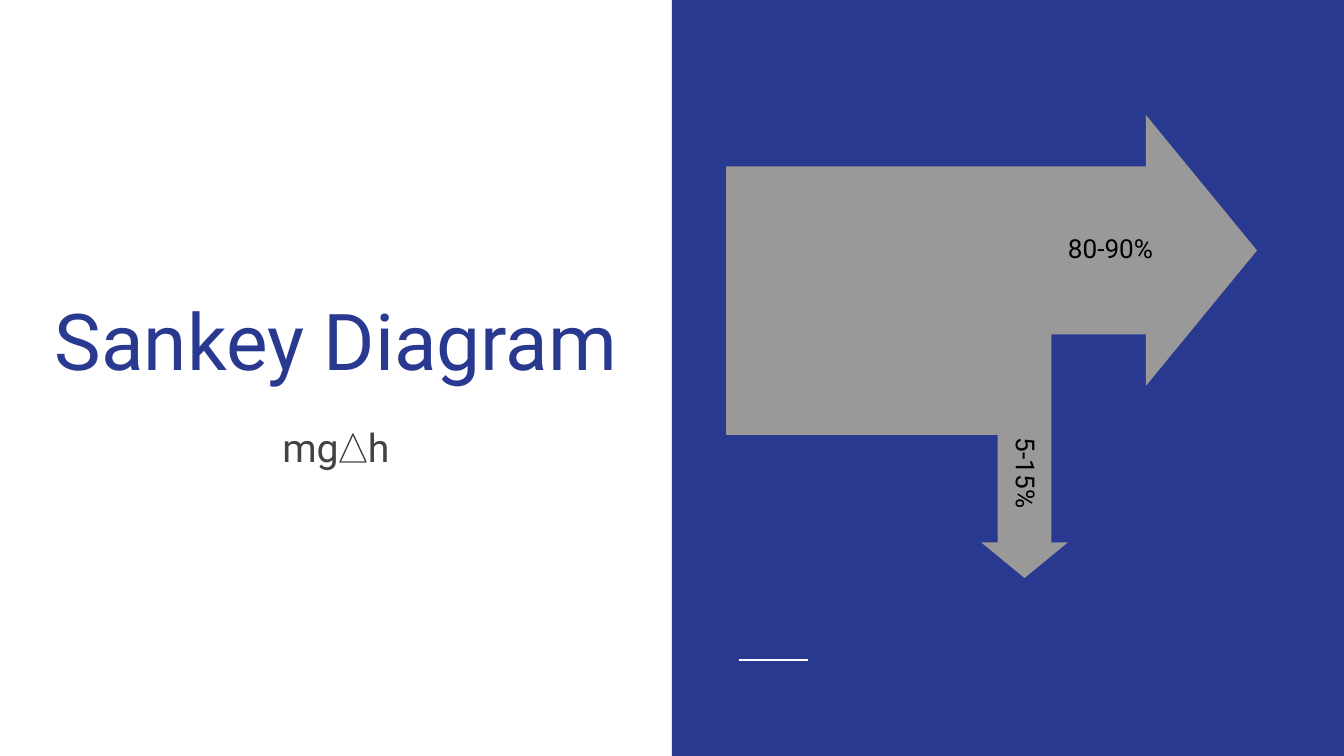
import pptx
import pptx.dml.color
import pptx.enum.shapes
import pptx.enum.text
import pptx.oxml.ns
import pptx.util
from lxml import etree

COLORS = {"blue": "2A3990", "white": "FFFFFF", "flow": "999999", "grey": "434343", "black": "000000"}
FONT = "Roboto"
WIDTH, HEIGHT = 1344, 756
EMU_PER_PX = 9144000 / WIDTH
INSET = 13
SHAPES = pptx.enum.shapes.MSO_SHAPE
ANCHOR = pptx.enum.text.MSO_ANCHOR
ALIGN = pptx.enum.text.PP_ALIGN


def px(length):
    return pptx.util.Emu(round(length * EMU_PER_PX))


def rgb(name):
    return pptx.dml.color.RGBColor.from_string(COLORS[name])


class SlideBuilder:
    """Holds the style and the slide being drawn."""

    def __init__(self, slide):
        self.slide = slide

    def shape(self, kind, box, fill=None, line=None, rotation=0, adjustments=()):
        shape = self.slide.shapes.add_shape(kind, *map(px, box))
        shape.shadow.inherit = False
        shape.rotation = rotation
        for index, value in enumerate(adjustments):
            shape.adjustments[index] = value
        if fill:
            shape.fill.solid()
            shape.fill.fore_color.rgb = rgb(fill)
        else:
            shape.fill.background()
        if line:
            shape.line.color.rgb = rgb(line)
            shape.line.width = pptx.util.Pt(0.75)
        else:
            shape.line.fill.background()

    def flow_arrow(self, box, rotation=0):
        self.shape(SHAPES.RIGHT_ARROW, box, "flow", rotation=rotation, adjustments=(0.62, 0.41))

    def rule(self, start, end, color):
        rule = self.slide.shapes.add_connector(
            pptx.enum.shapes.MSO_CONNECTOR.STRAIGHT, *map(px, start + end))
        rule.line.color.rgb = rgb(color)
        rule.line.width = pptx.util.Pt(1.5)
        etree.SubElement(rule._element.spPr, pptx.oxml.ns.qn("a:effectLst"))

    def title(self, box, text):
        title = self.slide.shapes.title
        title.left, title.top, title.width, title.height = map(px, box)
        self.fill_text(title.text_frame, [(text, 0)], 42, "blue", ALIGN.CENTER, ANCHOR.BOTTOM)

    def text(self, box, runs, size, color, align=ALIGN.LEFT, rotation=0):
        label = self.slide.shapes.add_textbox(*map(px, box))
        label.rotation = rotation
        self.fill_text(label.text_frame, runs, size, color, align, ANCHOR.TOP)

    def fill_text(self, frame, runs, size, color, align, anchor):
        """Fill a frame with (text, letter spacing in points) runs."""
        frame.word_wrap = True
        frame.auto_size = pptx.enum.text.MSO_AUTO_SIZE.NONE
        frame.vertical_anchor = anchor
        frame.margin_left = frame.margin_right = px(INSET)
        frame.margin_top = frame.margin_bottom = px(INSET)
        paragraph = frame.paragraphs[0]
        paragraph.alignment = align
        for text, spacing in runs:
            run = paragraph.add_run()
            run.text = text
            run.font.name = FONT
            run.font.size = pptx.util.Pt(size)
            run.font.color.rgb = rgb(color)
            if spacing:
                run.font._element.set("spc", str(round(spacing * 100)))


def main():
    deck = pptx.Presentation()
    deck.slide_width, deck.slide_height = px(WIDTH), px(HEIGHT)
    sankey = SlideBuilder(deck.slides.add_slide(deck.slide_layouts[5]))

    half = WIDTH // 2
    sankey.shape(SHAPES.RECTANGLE, (half, 0, half, HEIGHT), "blue")
    sankey.rule((739, 660), (808, 660), "white")

    sankey.title((39, 169, 594, 230), "Sankey Diagram")
    # The widened space leaves room for the delta triangle.
    sankey.text((39, 410, 594, 187), [("mg", 0), (" ", 10.4), ("h", 0)], 21, "grey", ALIGN.CENTER)

    sankey.flow_arrow((726, 115, 531, 271))
    sankey.flow_arrow((884, 394, 281, 87), rotation=90)
    sankey.shape(SHAPES.RECTANGLE, (726, 321, 290, 114), "flow")
    sankey.text((1055, 219, 125, 62), [("80-90%", 0)], 14, "black")
    sankey.text((973, 445, 102, 62), [("5-15%", 0)], 14, "black", rotation=90)

    sankey.shape(SHAPES.ISOSCELES_TRIANGLE, (340, 434, 26, 28), line="grey")
    deck.save("out.pptx")


if __name__ == "__main__":
    main()
